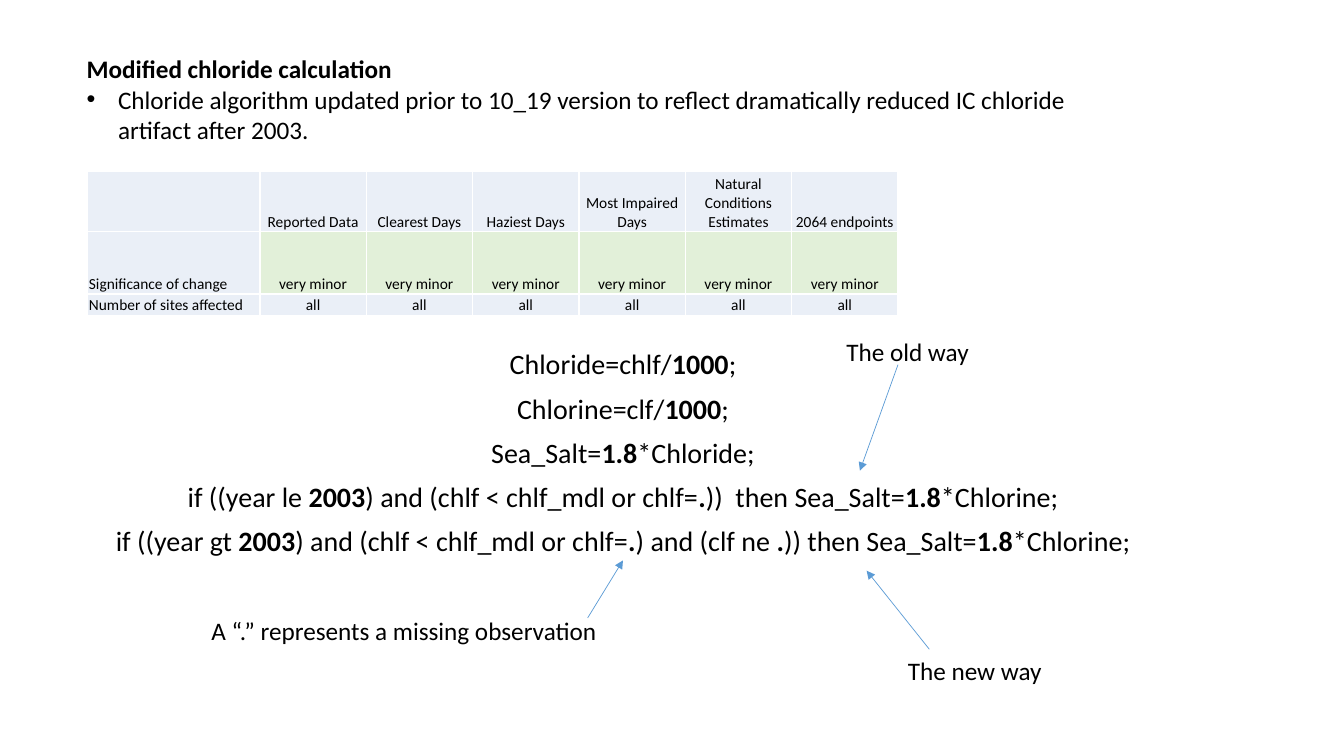
from lxml.etree import SubElement
from pptx import Presentation
from pptx.dml.color import RGBColor
from pptx.enum.shapes import MSO_CONNECTOR
from pptx.enum.text import MSO_ANCHOR, MSO_AUTO_SIZE, PP_ALIGN
from pptx.oxml.ns import qn
from pptx.util import Cm, Pt

COLORS = {"text": "000000", "arrow": "5B9BD5", "plain": "EAEFF7", "minor": "E2F0D9", "border": "FFFFFF"}
HEADING = "Modified chloride calculation"
UPDATE = ("Chloride algorithm updated prior to 10_19 version to reflect dramatically "
          "reduced IC chloride artifact after 2003.")
# Segments alternate between regular and bold.
FORMULAS = [
    ("Chloride=chlf/", "1000", ";"),
    ("Chlorine=clf/", "1000", ";"),
    ("Sea_Salt=", "1.8", "*Chloride;"),
    ("if ((year le ", "2003", ") and (chlf < chlf_mdl or chlf=", ".", "))  then Sea_Salt=", "1.8", "*Chlorine;"),
    ("if ((year gt ", "2003", ") and (chlf < chlf_mdl or chlf=", ".", ") and (clf ne ", ".",
     ")) then Sea_Salt=", "1.8", "*Chlorine;"),
]
IMPACT = [
    ["", "Reported Data", "Clearest Days", "Haziest Days", "Most Impaired Days",
     "Natural Conditions Estimates", "2064 endpoints"],
    ["Significance of change"] + ["very minor"] * 6,
    ["Number of sites affected"] + ["all"] * 6,
]
IMPACT_WIDTHS = [4.34] + [2.68] * 6
IMPACT_HEIGHTS = [1.52, 1.57, 0.53]
CALLOUTS = [
    ("The old way", (21.08, 8.36, 4.22, 1.02), (22.63, 9.19, 21.67, 11.86)),
    ("The new way", (22.63, 16.38, 4.22, 1.02), (23.42, 16.36, 21.84, 14.38)),
    ("A “.” represents a missing observation", (5.08, 15.37, 10.54, 1.02), (14.81, 15.57, 15.7, 14.12)),
]


def apply(target, formats):
    for key, value in formats.items():
        setattr(target, key, value)


def place(holder, box):
    apply(holder, dict(zip(("left", "top", "width", "height"), map(Cm, box))))
    apply(holder.text_frame, {"word_wrap": True, "auto_size": MSO_AUTO_SIZE.NONE,
                              "vertical_anchor": MSO_ANCHOR.TOP})


def write(paragraph, segments, size, bold=False, align=PP_ALIGN.LEFT, before=0, spacing=1.0):
    apply(paragraph, {"alignment": align, "space_before": Pt(before), "line_spacing": spacing})
    for index, segment in enumerate(segments):
        run = paragraph.add_run()
        run.text = segment
        apply(run.font, {"name": "Calibri", "size": Pt(size), "bold": bold or index % 2 == 1})
        run.font.color.rgb = RGBColor.from_string(COLORS["text"])


def set_bullet(paragraph, char=None, indent=0):
    props = paragraph._p.get_or_add_pPr()
    props.set("marL", str(Cm(indent)))
    props.set("indent", str(-Cm(indent)))
    if char:
        SubElement(props, qn("a:buFont"), typeface="Arial")
        SubElement(props, qn("a:buChar"), char=char)
    else:
        SubElement(props, qn("a:buNone"))


def add_arrow(slide, ends):
    arrow = slide.shapes.add_connector(MSO_CONNECTOR.STRAIGHT, *map(Cm, ends))
    arrow.line.color.rgb = RGBColor.from_string(COLORS["arrow"])
    arrow.line.width = Pt(0.5)
    SubElement(arrow.line._get_or_add_ln(), qn("a:tailEnd"), type="triangle")
    SubElement(arrow._element.spPr, qn("a:effectLst"))


def add_impact(slide):
    frame = slide.shapes.add_table(len(IMPACT), len(IMPACT[0]), Cm(2.21), Cm(4.32),
                                   Cm(sum(IMPACT_WIDTHS)), Cm(sum(IMPACT_HEIGHTS)))
    impact = frame.table
    impact.horz_banding = False
    for column, width in zip(impact.columns, IMPACT_WIDTHS):
        column.width = Cm(width)
    for row, height, labels in zip(impact.rows, IMPACT_HEIGHTS, IMPACT):
        row.height = Cm(height)
        for index, (cell, label) in enumerate(zip(row.cells, labels)):
            apply(cell, {"margin_left": Cm(0.03), "margin_right": Cm(0.03), "margin_top": Cm(0.03),
                         "margin_bottom": 0, "vertical_anchor": MSO_ANCHOR.BOTTOM})
            write(cell.text_frame.paragraphs[0], [label], 11,
                  align=PP_ALIGN.CENTER if index else PP_ALIGN.LEFT)
            for side in ("lnL", "lnR", "lnT", "lnB"):
                edge = SubElement(cell._tc.get_or_add_tcPr(), qn(f"a:{side}"), w=str(Pt(1)))
                SubElement(SubElement(edge, qn("a:solidFill")), qn("a:srgbClr"), val=COLORS["border"])
            cell.fill.solid()
            shade = "minor" if label == "very minor" else "plain"
            cell.fill.fore_color.rgb = RGBColor.from_string(COLORS[shade])


def main():
    deck = Presentation()
    apply(deck, {"slide_width": Cm(33.87), "slide_height": Cm(19.05)})
    slide = deck.slides.add_slide(deck.slide_layouts[3])
    heading, update, formulas = slide.placeholders

    place(heading, (1.93, 1.22, 26.82, 1.02))
    write(heading.text_frame.paragraphs[0], [HEADING], 18, bold=True)

    place(update, (1.93, 1.99, 26.82, 2.55))
    set_bullet(update.text_frame.paragraphs[0], "•", 0.79)
    write(update.text_frame.paragraphs[0], [UPDATE], 18)

    place(formulas, (1.73, 8.71, 27.94, 9.55))
    for index, segments in enumerate(FORMULAS):
        body = formulas.text_frame
        line = body.add_paragraph() if index else body.paragraphs[0]
        set_bullet(line)
        write(line, segments, 20, align=PP_ALIGN.CENTER, before=10 if index else 0, spacing=0.9)

    add_impact(slide)
    for label, box, ends in CALLOUTS:
        callout = slide.shapes.add_textbox(*map(Cm, box))
        place(callout, box)
        write(callout.text_frame.paragraphs[0], [label], 18)
        add_arrow(slide, ends)
    deck.save("out.pptx")


if __name__ == "__main__":
    main()
